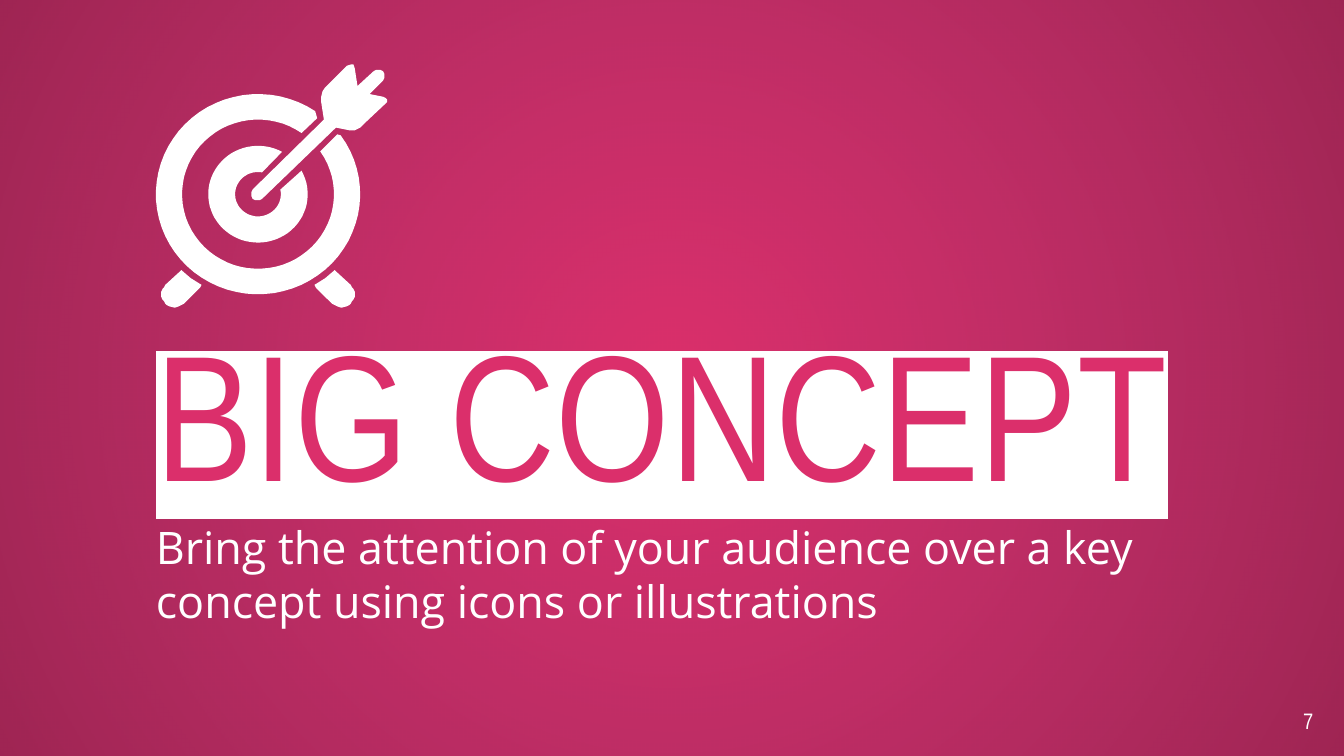
from math import cos, radians, sin

from pptx import Presentation
from pptx.dml.color import RGBColor
from pptx.enum.shapes import MSO_SHAPE
from pptx.enum.text import MSO_ANCHOR, MSO_AUTO_SIZE, PP_ALIGN
from pptx.oxml import parse_xml
from pptx.oxml.ns import nsdecls
from pptx.util import Inches, Pt

PINK = RGBColor(0xDB, 0x2F, 0x6B)
WHITE = RGBColor(0xFF, 0xFF, 0xFF)
NAVY = RGBColor(0x07, 0x37, 0x63)
INK = RGBColor(0x01, 0x0B, 0x15)

HEADING_FONT = "Arial Narrow"
BODY_FONT = "Open Sans"
WIDTH = 10
HEIGHT = WIDTH * 9 / 16
UNITS = 1000  # freeform units per inch

CENTER_X, CENTER_Y = 1.92, 1.445
LEFT_FOOT = [
    (1.35, 2.01), (1.23, 2.12), (1.22, 2.14), (1.21, 2.15), (1.2, 2.17),
    (1.2, 2.21), (1.21, 2.23), (1.22, 2.24), (1.23, 2.26), (1.24, 2.27),
    (1.26, 2.28), (1.3, 2.29), (1.33, 2.28), (1.35, 2.27), (1.37, 2.26),
    (1.49, 2.14), (1.5, 2.12), (1.42, 2.07),
]
ARROW = [
    (2.61, 0.48), (2.58, 0.49), (2.42, 0.65), (2.4, 0.68), (2.39, 0.72),
    (2.39, 0.76), (2.41, 0.89), (1.88, 1.41), (1.87, 1.43), (1.87, 1.46),
    (1.88, 1.48), (1.9, 1.49), (1.93, 1.49), (1.95, 1.48), (2.5, 0.95),
    (2.6, 0.97), (2.64, 0.97), (2.68, 0.95), (2.7, 0.93), (2.87, 0.77),
    (2.88, 0.76), (2.88, 0.74), (2.87, 0.73), (2.85, 0.72), (2.75, 0.7),
    (2.85, 0.6), (2.86, 0.58), (2.86, 0.55), (2.85, 0.53), (2.83, 0.52),
    (2.8, 0.52), (2.78, 0.53), (2.66, 0.64), (2.64, 0.51), (2.63, 0.48),
]


def write_text(sp, text, *, size, font, color, align=PP_ALIGN.LEFT,
               highlight=None, before=0):
    tf = sp.text_frame
    tf.word_wrap = True
    tf.auto_size = MSO_AUTO_SIZE.NONE
    tf.vertical_anchor = MSO_ANCHOR.TOP
    tf.margin_left = tf.margin_right = Inches(0.1)
    tf.margin_top = tf.margin_bottom = Inches(0.1)
    p = tf.paragraphs[0]
    p.alignment = align
    p.space_before = Pt(before)
    r = p.add_run()
    r.text = text
    r.font.size = Pt(size)
    r.font.name = font
    r.font.color.rgb = color
    if highlight is not None:
        fill = r._r.get_or_add_rPr().find("./{*}solidFill")
        fill.addnext(parse_xml(
            f'<a:highlight {nsdecls("a")}><a:srgbClr val="{highlight}"/>'
            '</a:highlight>'))


def place(sp, left, top, width, height):
    sp.left, sp.top = Inches(left), Inches(top)
    sp.width, sp.height = Inches(width), Inches(height)


def add_vignette(slide):
    """Darken the slide toward its corners, behind all other content."""
    sp = slide.shapes.add_shape(MSO_SHAPE.RECTANGLE, 0, 0,
                                Inches(WIDTH), Inches(HEIGHT))
    sp.shadow.inherit = False
    sp.line.fill.background()
    sp.fill.background()
    stops = "".join(
        f'<a:gs pos="{pos}"><a:srgbClr val="{color}">'
        f'<a:alpha val="{alpha}"/></a:srgbClr></a:gs>'
        for pos, color, alpha in [(0, NAVY, 0), (100000, INK, 28000)])
    gradient = parse_xml(
        f'<a:gradFill {nsdecls("a")} rotWithShape="1"><a:gsLst>{stops}</a:gsLst>'
        '<a:path path="circle"><a:fillToRect l="50000" t="50000" '
        'r="50000" b="50000"/></a:path></a:gradFill>')
    spPr = sp._element.spPr
    spPr.replace(spPr.find("./{*}noFill"), gradient)
    slide.shapes._spTree.insert(2, sp._element)


def arc(rx, ry, start, end, steps=64):
    """Points around the target's center, from start to end in degrees."""
    angles = [radians(start + (end - start) * i / steps)
              for i in range(steps + 1)]
    return [(CENTER_X + rx * cos(a), CENTER_Y + ry * sin(a)) for a in angles]


def add_outline(shapes, points):
    scaled = [(x * UNITS, y * UNITS) for x, y in points]
    builder = shapes.build_freeform(*scaled[0], scale=Inches(1) / UNITS)
    builder.add_line_segments(scaled[1:], close=True)
    sp = builder.convert_to_shape()
    sp.shadow.inherit = False
    sp.fill.solid()
    sp.fill.fore_color.rgb = WHITE
    sp.line.fill.background()


def add_target_icon(slide):
    outer_ring = (arc(0.76, 0.745, -36, 304) + [(2.36, 0.88)]
                  + arc(0.565, 0.555, 305, -35) + [(2.51, 1)])
    inner_ring = arc(0.37, 0.36, -29, 299) + arc(0.17, 0.165, 280, -12)
    right_foot = [(2 * CENTER_X - x, y) for x, y in LEFT_FOOT]
    group = slide.shapes.add_group_shape()
    for points in (outer_ring, inner_ring, LEFT_FOOT, right_foot, ARROW):
        add_outline(group.shapes, points)


def main():
    prs = Presentation()
    prs.slide_width, prs.slide_height = Inches(WIDTH), Inches(HEIGHT)
    slide = prs.slides.add_slide(prs.slide_layouts[0])
    slide.background.fill.solid()
    slide.background.fill.fore_color.rgb = PINK
    add_vignette(slide)

    title, subtitle = slide.placeholders
    place(title, 1.06, 2.15, 7.88, 1.27)
    write_text(title, "BIG CONCEPT", size=96, font=HEADING_FONT, color=PINK,
               highlight=WHITE)
    place(subtitle, 1.06, 3.77, 7.88, 0.86)
    write_text(subtitle,
               "Bring the attention of your audience over a key concept "
               "using icons or illustrations",
               size=24, font=BODY_FONT, color=WHITE, before=6)

    add_target_icon(slide)

    number = slide.shapes.add_textbox(Inches(9.27), Inches(5.16),
                                      Inches(0.6), Inches(0.38))
    write_text(number, "7", size=12, font=HEADING_FONT, color=WHITE,
               align=PP_ALIGN.RIGHT)
    prs.save("out.pptx")


if __name__ == "__main__":
    main()
